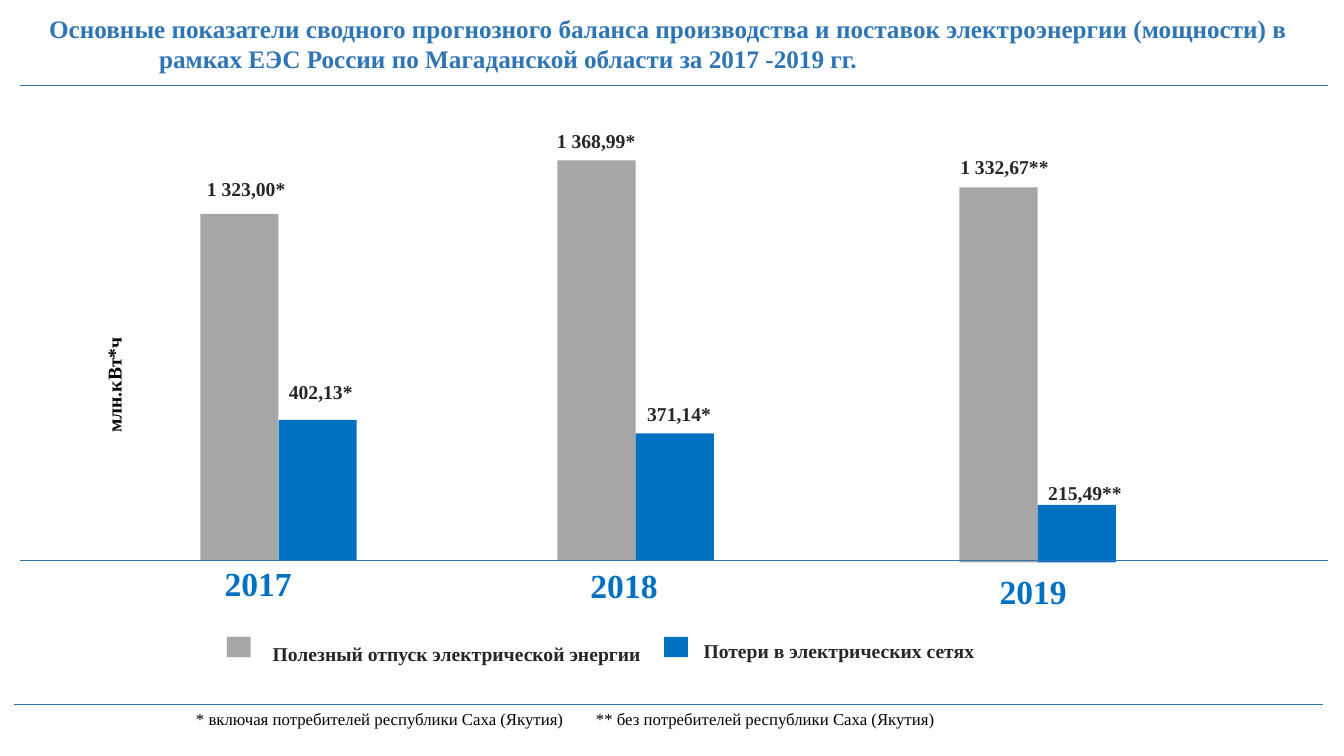
import dataclasses

import pptx
import pptx.dml.color
import pptx.enum.shapes
import pptx.enum.text
import pptx.oxml
import pptx.util
from lxml import etree

Cm = pptx.util.Cm
ALIGN = pptx.enum.text.PP_ALIGN
DRAWING = "http://schemas.openxmlformats.org/drawingml/2006/main"


@dataclasses.dataclass(frozen=True)
class Theme:
    font: str = "Times New Roman"
    title: str = "2E75B6"
    supply: str = "A6A6A6"
    losses: str = "0070C0"
    label: str = "262626"
    black: str = "000000"
    title_size: int = 18
    year_size: int = 24
    label_size: int = 14
    note_size: int = 12


@dataclasses.dataclass(frozen=True)
class Bar:
    value: str
    height: float
    label_left: float  # from the bar's left side
    label_rise: float  # from the bar's top
    label_width: float


@dataclasses.dataclass(frozen=True)
class Year:
    name: str
    left: float
    base: float
    name_left: float  # from the first bar's left side
    name_top: float  # from the axis
    supply: Bar
    losses: Bar


THEME = Theme()
BAR_WIDTH = 1.97
YEARS = (
    Year("2017", 5.05, 14.13, 0.36, -0.05,
         Bar("1 323,00*", 8.74, -0.1, 1.35, 2.51), Bar("402,13*", 3.55, 0, 1.42, 2.13)),
    Year("2018", 14.05, 14.12, 0.58, 0,
         Bar("1 368,99*", 10.08, -0.28, 1.22, 2.51), Bar("371,14*", 3.2, 0.03, 1.22, 2.13)),
    Year("2019", 24.18, 14.17, 0.76, 0.13,
         Bar("1 332,67**", 9.45, -0.25, 1.24, 2.77), Bar("215,49**", 1.45, 0, 1.02, 2.39)),
)


def color(value):
    return pptx.dml.color.RGBColor.from_string(value)


def add_text(page, left, top, width, height, text, size, ink,
             bold=True, align=ALIGN.LEFT, spacing=None, wrap=False):
    box = page.shapes.add_textbox(Cm(left), Cm(top), Cm(width), Cm(height))
    frame = box.text_frame
    frame.text = text
    frame.word_wrap = wrap
    frame.auto_size = pptx.enum.text.MSO_AUTO_SIZE.SHAPE_TO_FIT_TEXT
    para = frame.paragraphs[0]
    para.alignment = align
    para.line_spacing = spacing
    for span in para.runs:
        span.font.name = THEME.font
        span.font.size = pptx.util.Pt(size)
        span.font.bold = bold
        span.font.color.rgb = color(ink)
    return box


def add_block(page, left, top, width, height, fill):
    block = page.shapes.add_shape(pptx.enum.shapes.MSO_SHAPE.RECTANGLE,
                                  Cm(left), Cm(top), Cm(width), Cm(height))
    block.shadow.inherit = False
    block.fill.solid()
    block.fill.fore_color.rgb = color(fill)
    block.line.fill.background()


def add_rule(page, left, top, width):
    rule = page.shapes.add_connector(pptx.enum.shapes.MSO_CONNECTOR.STRAIGHT,
                                     Cm(left), Cm(top), Cm(left + width), Cm(top))
    rule.line.color.rgb = color(THEME.title)
    rule.line.width = pptx.util.Pt(1)
    etree.SubElement(rule._element.spPr, f"{{{DRAWING}}}effectLst")


def add_title(page, left, top, width):
    box = add_text(page, left + 0.48, top, width - 0.97, 1.8,
                   "Основные показатели сводного прогнозного баланса производства и поставок "
                   "электроэнергии (мощности) в рамках ЕЭС России по Магаданской области "
                   "за 2017 -2019 гг.",
                   THEME.title_size, THEME.title, wrap=True)
    # The second line hangs to the right of the first
    properties = box.text_frame.paragraphs[0]._p.get_or_add_pPr()
    properties.set("marL", str(Cm(2.77)))
    properties.set("indent", str(-Cm(2.77)))
    add_rule(page, left, top + 1.96, width)


def add_bar(page, left, base, bar, fill):
    top = base - bar.height
    add_block(page, left, top, BAR_WIDTH, bar.height, fill)
    add_text(page, left + bar.label_left, top - bar.label_rise, bar.label_width, 1.04,
             bar.value, THEME.label_size, THEME.label, align=ALIGN.CENTER, spacing=1.5)


def add_bars(page, left, axis, width):
    # Unit of measure, turned to read upwards
    unit = add_text(page, left + 0.89, axis - 4.85, 2.95, 0.86, "млн.кВт*ч",
                    THEME.label_size, THEME.black, align=ALIGN.CENTER)
    unit.rotation = 270
    # A pair of bars for each year
    for year in YEARS:
        add_bar(page, year.left, year.base, year.supply, THEME.supply)
        add_bar(page, year.left + BAR_WIDTH, year.base, year.losses, THEME.losses)
        add_text(page, year.left + year.name_left, axis + year.name_top, 2.5, 1.27,
                 year.name, THEME.year_size, THEME.losses, wrap=True)
    add_rule(page, left, axis, width)


def add_legend(page, left, top):
    entries = (
        (0, "Полезный отпуск электрической энергии", THEME.supply, 0.9, -0.18, 9.88),
        (11.02, "Потери в электрических сетях", THEME.losses, 0.74, -0.25, 7.39),
    )
    for offset, name, fill, text_left, text_top, width in entries:
        add_block(page, left + offset, top, 0.6, 0.51, fill)
        add_text(page, left + offset + text_left, top + text_top, width, 1.04,
                 name, THEME.label_size, THEME.label, spacing=1.3)


def add_footnote(page, left, top, width):
    add_rule(page, left, top, width)
    box = add_text(page, left + 4.33, top - 0.18, 21, 0.91,
                   "* включая потребителей республики Саха (Якутия)\t"
                   "** без потребителей республики Саха (Якутия)",
                   THEME.note_size, THEME.black, bold=False, spacing=1.3, wrap=True)
    # The second note starts at a tab stop
    properties = box.text_frame.paragraphs[0]._p.get_or_add_pPr()
    stops = etree.SubElement(properties, f"{{{DRAWING}}}tabLst")
    etree.SubElement(stops, f"{{{DRAWING}}}tab", pos=str(Cm(10.08)), algn="l")


def main():
    deck = pptx.Presentation()
    deck.slide_width, deck.slide_height = Cm(33.87), Cm(19.05)
    page = deck.slides.add_slide(deck.slide_layouts[6])
    add_title(page, 0.51, 0.2, 32.97)
    add_bars(page, 0.51, 14.12, 32.97)
    add_legend(page, 5.72, 16.05)
    add_footnote(page, 0.36, 17.75, 32.99)
    deck.save("out.pptx")


if __name__ == "__main__":
    main()
